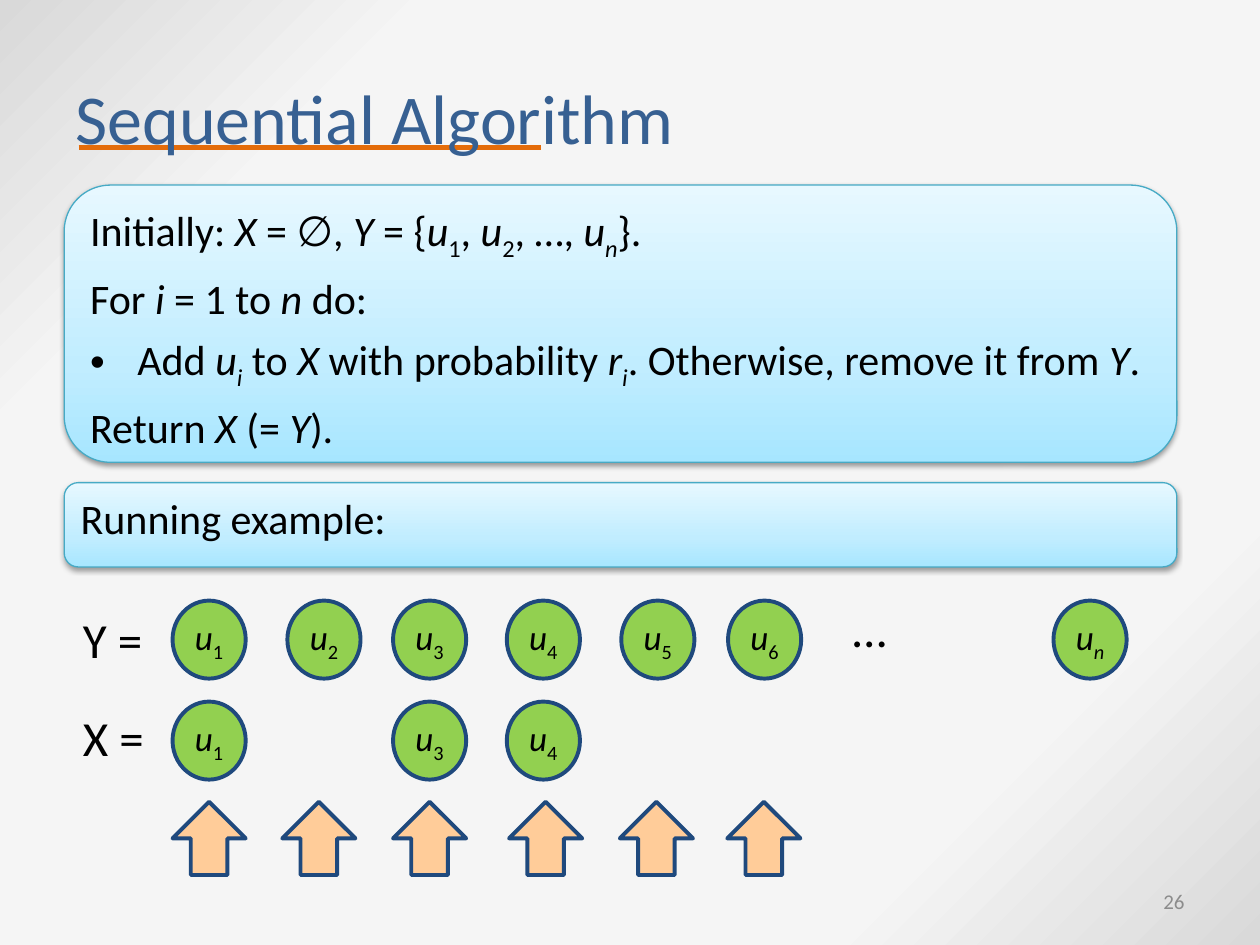
"""Build the Sequential Algorithm slide with its running example."""
from dataclasses import dataclass

from lxml import etree
from pptx import Presentation
from pptx.dml.color import RGBColor
from pptx.enum.shapes import MSO_CONNECTOR, MSO_SHAPE
from pptx.enum.text import MSO_ANCHOR, PP_ALIGN
from pptx.oxml.ns import qn
from pptx.util import Pt

LEFT, CENTER, RIGHT = PP_ALIGN.LEFT, PP_ALIGN.CENTER, PP_ALIGN.RIGHT
TOP, MIDDLE = MSO_ANCHOR.TOP, MSO_ANCHOR.MIDDLE
ROUNDED, OVAL, UP_ARROW = MSO_SHAPE.ROUNDED_RECTANGLE, MSO_SHAPE.OVAL, MSO_SHAPE.UP_ARROW
STRAIGHT = MSO_CONNECTOR.STRAIGHT

FONT = "Calibri"
COLORS = {
    "title": "376092", "rule": "E46C0A", "text": "000000", "number": "8C8C8C",
    "node": "92D050", "arrow": "FFCC99", "outline": "1F497D", "panel_line": "46AAC5",
    "shadow": "000000", "edge": "D9D9D9", "page": "F5F5F5",
    "panel_low": "A7E6FF", "panel_mid": "C1EDFF", "panel_high": "E7F8FF",
}
PAGE_STOPS = [(0, "edge"), (20, "page"), (80, "page"), (100, "edge")]
PANEL_STOPS = [(0, "panel_low"), (35, "panel_mid"), (100, "panel_high")]
STYLES = {"/": (True, False), "_": (False, True), "~": (True, True)}


@dataclass
class Panel:
    top: float
    height: float
    lines: list
    indent: float = 0


@dataclass
class Label:
    text: str
    left: float
    top: float
    width: float = 50
    height: float = 41
    size: float = 28
    color: str = "text"
    align: int = LEFT
    anchor: int = TOP


PANELS = [
    Panel(275.8, 48.2, ["Running example:"]),
    Panel(105.8, 158.4, [
        "Initially: |/X| = ∅, |/Y| = {|/u|_1|, |/u|_2|, …, |/u|~n|}.",
        "For |/i| = 1 to |/n| do:",
        "•Add |/u|~i| to |/X| with probability |/r|~i|. Otherwise, remove it from |/Y|.",
        "Return |/X| (= |/Y|).",
    ], 27),
]
LABELS = [
    Label("Y =", 40.3, 344.9),
    Label("X =", 40.3, 401),
    Label("…", 480.2, 338.4),
    Label("26", 516.2, 500.4, 167.8, 28.8, 12, "number", RIGHT, MIDDLE),
]
NODE_LEFTS = {"_1": 98.6, "_2": 164.2, "_3": 224.6, "_4": 289.6,
              "_5": 355, "_6": 416, "~n": 602}
NODE_ROWS = [(343.2, list(NODE_LEFTS)), (400.9, ["_1", "_3", "_4"])]
ARROW_LEFTS = [98.6, 161.3, 224.6, 290.9, 354.2, 415.6]
ARROW_TOP, NODE_WIDTH, NODE_HEIGHT = 458.2, 41.8, 44.6


def rgb(name: str) -> RGBColor:
    return RGBColor.from_string(COLORS[name])


def set_gradient(fill, element, stops: list, angle: int) -> None:
    fill.gradient()
    stop_list = next(element.iter(qn("a:gsLst")))
    for old in list(stop_list):
        stop_list.remove(old)
    for position, name in stops:
        stop = etree.SubElement(stop_list, qn("a:gs"), pos=str(position * 1000))
        etree.SubElement(stop, qn("a:srgbClr"), val=COLORS[name])
    next(element.iter(qn("a:lin"))).set("ang", str(angle * 60000))


def write(tf, lines: list, *, size: float, color: str = "text", align: int = LEFT,
          anchor: int = TOP, wrap: bool = True, after: float = 0, indent: float = 0) -> None:
    tf.word_wrap = wrap
    tf.vertical_anchor = anchor
    for index, line in enumerate(lines):
        p = tf.add_paragraph() if index else tf.paragraphs[0]
        p.alignment = align
        p.space_after = Pt(after)
        if indent:
            props = p._p.get_or_add_pPr()
            props.set("marL", str(Pt(indent)))
            props.set("indent", str(-Pt(indent)))
            if line.startswith("•"):
                etree.SubElement(props, qn("a:buFont"), typeface="Arial")
                etree.SubElement(props, qn("a:buChar"), char="•")
                line = line[1:]
        for part in line.split("|"):
            italic, subscript = STYLES.get(part[0], (False, False))
            r = p.add_run()
            r.text = part[1:] if part[0] in STYLES else part
            r.font.name, r.font.size, r.font.italic = FONT, Pt(size), italic
            r.font.color.rgb = rgb(color)
            if subscript:
                r.font._element.set("baseline", "-25000")


def add_shape(s, kind: int, left: float, top: float, width: float, height: float,
              line: str, weight: float):
    sp = s.shapes.add_shape(kind, Pt(left), Pt(top), Pt(width), Pt(height))
    sp.shadow.inherit = False
    sp.line.color.rgb = rgb(line)
    sp.line.width = Pt(weight)
    return sp


def add_panel(s, panel: Panel) -> None:
    sp = add_shape(s, ROUNDED, 36.7, panel.top, 635.8, panel.height, "panel_line", 0.75)
    set_gradient(sp.fill, sp.element, PANEL_STOPS, 270)
    effects = next(sp.element.iter(qn("a:effectLst")))
    shadow = etree.SubElement(effects, qn("a:outerShdw"), blurRad=str(Pt(3.1)),
                              dist=str(Pt(1.6)), dir="5400000")
    color = etree.SubElement(shadow, qn("a:srgbClr"), val=COLORS["shadow"])
    etree.SubElement(color, qn("a:alpha"), val="38000")
    write(sp.text_frame, panel.lines, size=24, after=6, indent=panel.indent)


def add_node(s, left: float, top: float, index: str) -> None:
    sp = add_shape(s, OVAL, left, top, NODE_WIDTH, NODE_HEIGHT, "outline", 2.25)
    sp.fill.solid()
    sp.fill.fore_color.rgb = rgb("node")
    tf = sp.text_frame
    tf.margin_left = tf.margin_right = Pt(5.8)
    write(tf, ["/u|" + index], size=20, align=CENTER, anchor=MIDDLE, wrap=False)


def add_arrow(s, left: float) -> None:
    sp = add_shape(s, UP_ARROW, left, ARROW_TOP, NODE_WIDTH, NODE_WIDTH, "outline", 2.25)
    sp.fill.solid()
    sp.fill.fore_color.rgb = rgb("arrow")


def add_label(s, label: Label) -> None:
    box = s.shapes.add_textbox(Pt(label.left), Pt(label.top), Pt(label.width), Pt(label.height))
    write(box.text_frame, [label.text], size=label.size, color=label.color,
          align=label.align, anchor=label.anchor, wrap=label.align == RIGHT)


def add_title(s, text: str) -> None:
    title = s.shapes.title
    title.left, title.top, title.width, title.height = Pt(36), Pt(38.2), Pt(648), Pt(56.2)
    write(title.text_frame, [text], size=40, color="title", anchor=MIDDLE)
    rule = s.shapes.add_connector(STRAIGHT, Pt(44.9), Pt(84.2), Pt(309.3), Pt(84.2))
    rule.line.color.rgb = rgb("rule")
    rule.line.width = Pt(3)
    etree.SubElement(rule.element.spPr, qn("a:effectLst"))
    title.element.addprevious(rule.element)


def main() -> None:
    prs = Presentation()
    prs.slide_width, prs.slide_height = Pt(720), Pt(540)
    s = prs.slides.add_slide(prs.slide_layouts[5])
    set_gradient(s.background.fill, s.element, PAGE_STOPS, 45)
    add_title(s, "Sequential Algorithm")
    for panel in PANELS:
        add_panel(s, panel)
    for top, indices in NODE_ROWS:
        for index in indices:
            add_node(s, NODE_LEFTS[index], top, index)
    for left in ARROW_LEFTS:
        add_arrow(s, left)
    for label in LABELS:
        add_label(s, label)
    prs.save("out.pptx")


if __name__ == "__main__":
    main()
